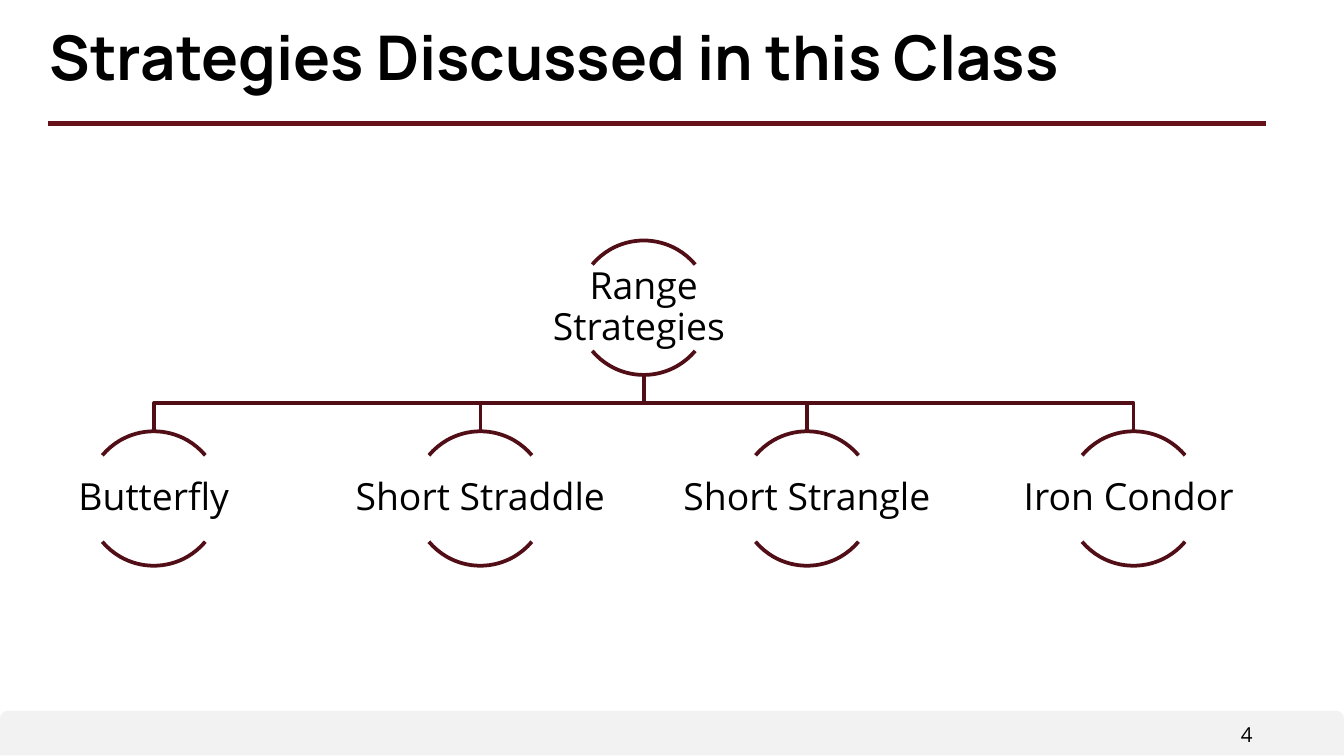
from pptx import Presentation
from pptx.dml.color import RGBColor
from pptx.enum import shapes, text
from pptx.oxml.ns import qn
from pptx.util import Inches, Pt
from lxml import etree

BLACK = RGBColor(0, 0, 0)
GREY = RGBColor(0xF2, 0xF2, 0xF2)
RULE = RGBColor(0x67, 0x12, 0x1B)
WINE = RGBColor(0x52, 0x0E, 0x16)
KIND = shapes.MSO_SHAPE
ALIGN = text.PP_ALIGN
ROOT = "Range Strategies "
LEAVES = ["Butterfly", "Short Straddle", "Short Strangle", "Iron Condor "]
SIZE = 1       # diameter of a node
STEP = 2.43    # distance between leaf nodes
DROP = 1.42    # distance between the two levels


def add_text(slide, box, words, font, frame=None, para=None, pad=(0.07, 0.04)):
    tf = slide.shapes.add_textbox(*map(Inches, box)).text_frame
    x, y = map(Inches, pad)
    base = dict(word_wrap=True, margin_left=x, margin_right=x,
                margin_top=y, margin_bottom=y)
    p = tf.paragraphs[0]
    p.text = words
    face = dict(name="Open Sans") | font
    for part, form in ((tf, base | (frame or {})), (p, para or {}), (p.runs[0].font, face)):
        for key, value in form.items():
            setattr(part, key, value)
    p.runs[0].font.color.rgb = BLACK


def set_line(shape, color, width):
    shape.line.color.rgb = color
    shape.line.width = Pt(width)


def add_header(slide, box):
    left, top, width, height = box
    add_text(slide, box, "Strategies Discussed in this Class",
             dict(name="Manrope", size=Pt(33), bold=True), para=dict(line_spacing=0.9))
    # Rule under the title
    y = Inches(top + height + 0.08)
    rule = slide.shapes.add_connector(shapes.MSO_CONNECTOR.STRAIGHT,
                                      Inches(left + 0.06), y, Inches(left + 9.12), y)
    set_line(rule, RULE, 2.5)
    etree.SubElement(rule._element.spPr, qn("a:effectLst"))


def add_footer(slide, box):
    left, top, width, height = box
    band = slide.shapes.add_shape(KIND.ROUND_2_SAME_RECTANGLE, *map(Inches, box))
    band.shadow.inherit = False
    band.fill.solid()
    band.fill.fore_color.rgb = GREY
    band.line.fill.background()
    # Page number
    add_text(slide, (left + 8.12, top + 0.04, 1.27, 0.25), "4",
             dict(size=Pt(11)), para=dict(alignment=ALIGN.RIGHT))


def add_link(slide, start, end):
    (x1, y1), (x2, y2) = start, end
    mid = (y1 + y2) / 2
    points = [(Inches(x), Inches(y)) for x, y in ((x1, mid), (x2, mid), end)]
    path = slide.shapes.build_freeform(Inches(x1), Inches(y1))
    path.add_line_segments(points, close=False)
    link = path.convert_to_shape()
    link.shadow.inherit = False
    link.fill.background()
    set_line(link, WINE, 2)


def add_node(slide, box, label):
    left, top, width, height = box
    # Upper and lower arcs; angles are in units of 5/3 degree
    for angles in ((132, 192), (24, 84)):
        arc = slide.shapes.add_shape(KIND.ARC, *map(Inches, box))
        arc.adjustments[0], arc.adjustments[1] = angles
        arc.shadow.inherit = False
        arc.fill.background()
        set_line(arc, WINE, 2)
    add_text(slide, (left - width / 2, top + 0.18 * height, 2 * width, 0.64 * height),
             label, dict(size=Pt(20)),
             dict(vertical_anchor=text.MSO_ANCHOR.MIDDLE),
             dict(alignment=ALIGN.CENTER, line_spacing=0.9), (0.01, 0.01))


def add_tree(slide, box):
    left, top, width, height = box
    mid = left + width / 2
    first = mid - STEP * (len(LEAVES) - 1) / 2
    spots = [(first + i * STEP, top + DROP) for i in range(len(LEAVES))]
    # Links lie behind the nodes, the rightmost at the back
    for spot in reversed(spots):
        add_link(slide, (mid, top + SIZE), spot)
    for label, (x, y) in zip([ROOT] + LEAVES, [(mid, top)] + spots):
        add_node(slide, (x - SIZE / 2, y, SIZE, SIZE), label)


def main():
    deck = Presentation()
    # Widescreen, 16 to 9
    deck.slide_width = Inches(10)
    deck.slide_height = Inches(10 * 9 / 16)
    slide = deck.slides.add_slide(deck.slide_layouts[6])
    add_footer(slide, (0, 5.29, 10, 0.33))
    add_header(slide, (0.3, 0.16, 9.31, 0.68))
    add_tree(slide, (0.14, 1.79, 9.3, 2.42))
    deck.save("out.pptx")


if __name__ == "__main__":
    main()
